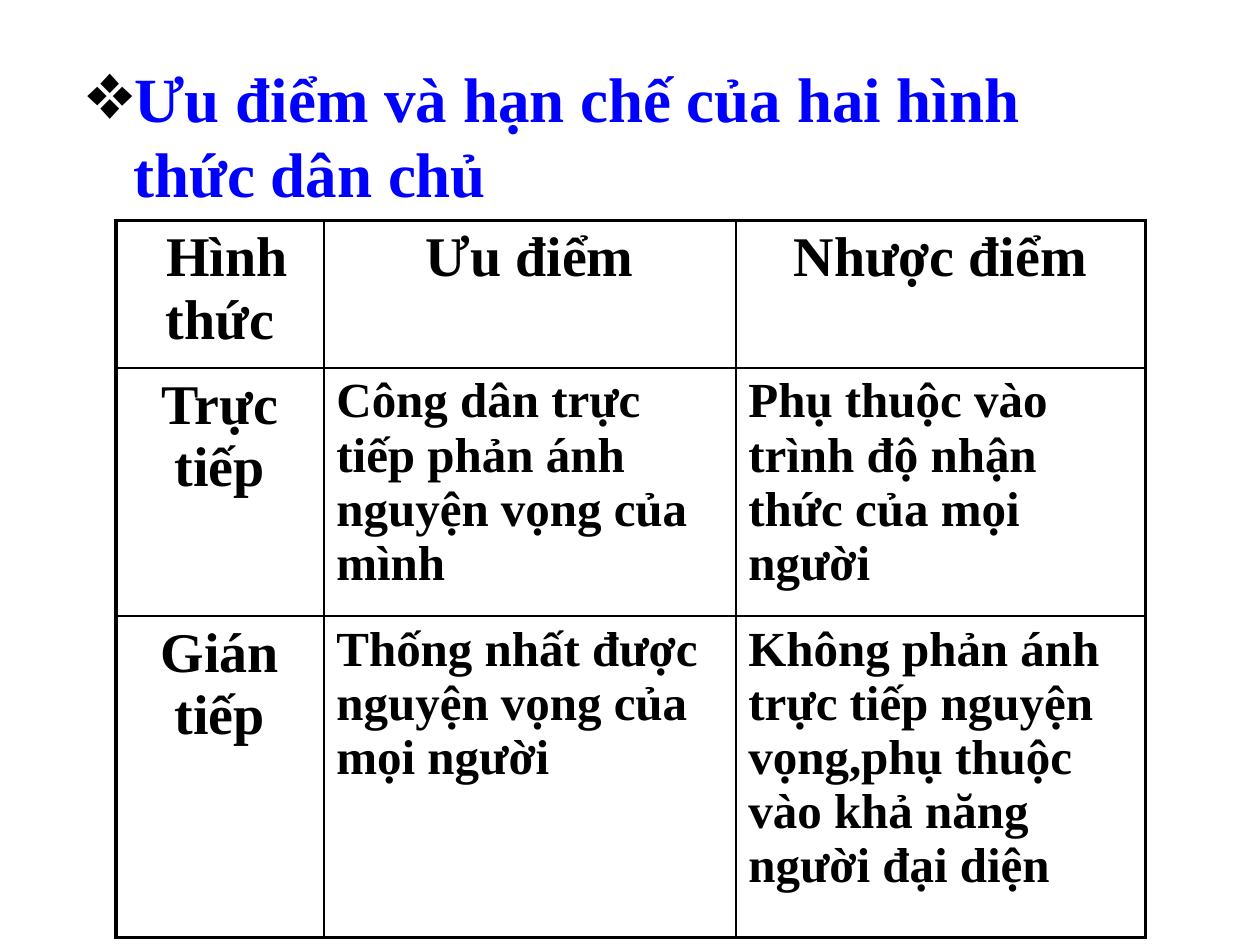
from lxml.etree import SubElement as Sub
from pptx import Presentation
from pptx.dml.color import RGBColor as RGB
from pptx.enum.text import PP_ALIGN as Align
from pptx.oxml.ns import qn
from pptx.util import Emu, Inches, Pt

TITLE = "Ưu điểm và hạn chế của hai hình thức dân chủ"
ROWS = [
    (" Hình thức", "Ưu điểm", "Nhược điểm"),
    ("Trực tiếp", "Công dân trực tiếp phản ánh nguyện vọng của mình",
     "Phụ thuộc vào trình độ nhận thức của mọi người"),
    ("Gián tiếp", "Thống nhất được nguyện vọng của mọi người",
     "Không phản ánh trực tiếp nguyện vọng,phụ thuộc vào khả năng người đại diện"),
]
THEME = dict(font="Times New Roman", title="0000FF", ink="000000",
             title_pt=36, head_pt=32, body_pt=28, outer_pt=2.25, inner_pt=1)
COLS = (1.65, 3.27, 3.25)
HEIGHTS = (1.17, 1.97, 2.55)
INDENT = Inches(0.38)


def style(p, size, color):
    f = p.font
    f.name, f.size, f.bold = THEME["font"], Pt(size), True
    f.color.rgb = RGB.from_string(color)


def add_color(parent, color):
    Sub(Sub(parent, qn("a:solidFill")), qn("a:srgbClr"), val=color)


def add_bullet(p, char):
    pPr = p._p.get_or_add_pPr()
    pPr.set("marL", str(INDENT))
    pPr.set("indent", str(-INDENT))
    Sub(Sub(pPr, qn("a:buClr")), qn("a:srgbClr"), val=THEME["ink"])
    Sub(pPr, qn("a:buFont"), typeface=THEME["font"])
    Sub(pPr, qn("a:buChar"), char=char)


def add_borders(cell, row, col):
    outer = dict(L=col == 0, R=col == len(COLS) - 1,
                 T=row == 0, B=row == len(ROWS) - 1)
    tcPr = cell._tc.get_or_add_tcPr()
    for side, is_outer in outer.items():
        width = Pt(THEME["outer_pt" if is_outer else "inner_pt"])
        add_color(Sub(tcPr, qn(f"a:ln{side}"), w=str(width)), THEME["ink"])


def add_title(s):
    tf = s.shapes.add_textbox(*map(Inches, (0.58, 0.42, 8.58, 1.3))).text_frame
    tf.word_wrap = True
    p = tf.paragraphs[0]
    p.text = TITLE
    add_bullet(p, "❖")
    style(p, THEME["title_pt"], THEME["title"])


def add_grid(s):
    frame = s.shapes.add_table(len(ROWS), len(COLS), Inches(0.92), Inches(1.75),
                               Inches(sum(COLS)), Inches(sum(HEIGHTS)))
    table = frame.table
    table.first_row = table.horz_banding = False
    for column, width in zip(table.columns, COLS):
        column.width = Inches(width)
    for i, (texts, height) in enumerate(zip(ROWS, HEIGHTS)):
        table.rows[i].height = Inches(height)
        for j, text in enumerate(texts):
            cell = table.cell(i, j)
            add_borders(cell, i, j)
            cell.fill.background()
            heading = i == 0 or j == 0
            p = cell.text_frame.paragraphs[0]
            p.text = text
            p.alignment = Align.CENTER if heading else Align.LEFT
            style(p, THEME["head_pt" if heading else "body_pt"], THEME["ink"])


def main():
    prs = Presentation()
    prs.slide_width, prs.slide_height = Inches(10), Inches(7.5)
    s = prs.slides.add_slide(prs.slide_layouts[6])
    add_title(s)
    add_grid(s)
    prs.save("out.pptx")


if __name__ == "__main__":
    main()
